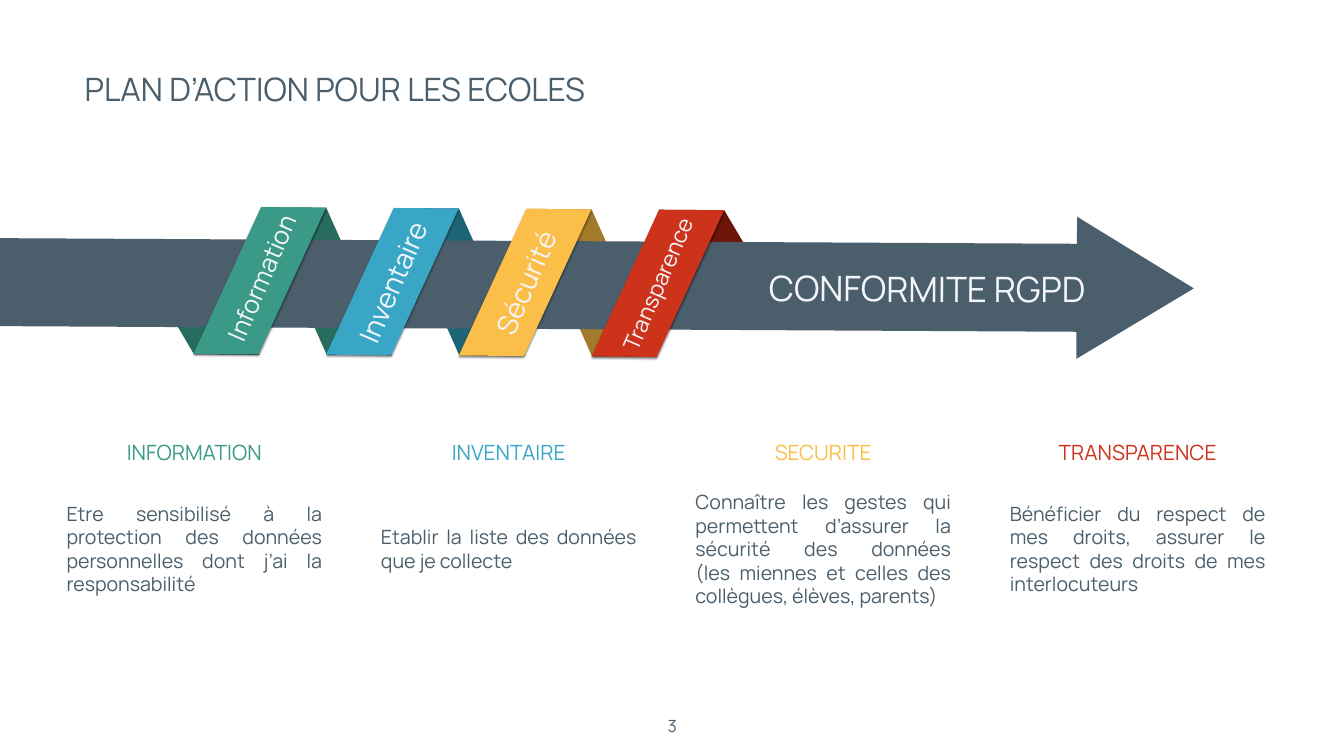
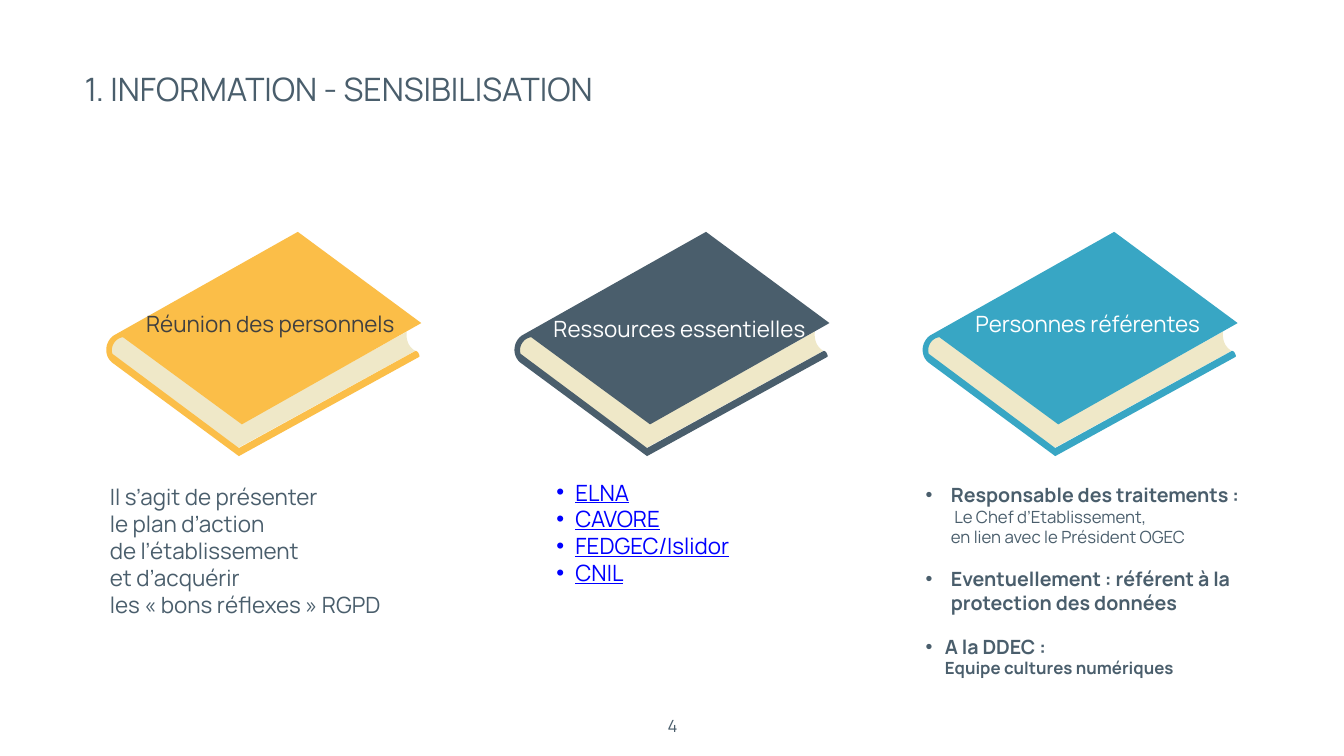
from lxml import etree
from pptx import Presentation
from pptx.dml.color import RGBColor
from pptx.enum.shapes import MSO_SHAPE
from pptx.enum.text import MSO_ANCHOR, PP_ALIGN
from pptx.oxml.ns import qn
from pptx.util import Pt

PX = 9144
FONT = "Manrope"
TOP, MIDDLE = MSO_ANCHOR.TOP, MSO_ANCHOR.MIDDLE
LEFT, CENTER, JUSTIFY = PP_ALIGN.LEFT, PP_ALIGN.CENTER, PP_ALIGN.JUSTIFY
RIGHT_ARROW = MSO_SHAPE.RIGHT_ARROW

COLORS = {
    "slate": "4A5E6C", "green": "3A9A87", "blue": "38A6C4", "yellow": "FBBE48",
    "red": "CD321B", "light": "F3F5F9", "white": "FFFFFF", "charcoal": "404040",
    "link": "0000FF", "paper": "EFE8C8", "green edge": "256C5F",
    "green fold": "276C5F", "blue fold": "1E6477", "yellow fold": "A17A2C",
    "red fold": "6D1509",
}

TITLE_BOX = (162, 131, 2497, 89)
NUMBER_BOX = (1319, 1415, 29, 52)

PLAN_TITLE = "PLAN D’ACTION POUR LES ECOLES"
PLAN_GOAL = "CONFORMITE RGPD"
STEPS = [
    ("Information", 36, (358, 509, 320, 83), "green", "INFORMATION",
     "Etre sensibilisé à la protection des données personnelles dont j’ai la responsabilité"),
    ("Inventaire", 40, (640, 517, 277, 84), "blue", "INVENTAIRE",
     "Etablir la liste des données que je collecte"),
    ("Sécurité", 40, (904, 519, 277, 84), "yellow", "SECURITE",
     "Connaître les gestes qui permettent d’assurer la sécurité des données\n"
     "(les miennes et celles des collègues, élèves, parents)"),
    ("Transparence", 32, (1147, 521, 315, 84), "red", "TRANSPARENCE",
     "Bénéficier du respect de mes droits, assurer le respect des droits de mes interlocuteurs"),
]
TILT = 0.3
RIBBON_TURN = 293.3
RIBBON_STEP, RIBBON_DROP = 263.3, 1.7
COLUMN_LEFT, COLUMN_STEP, COLUMN_WIDTH = 126, 624, 519
RIBBON = [(0, 0), (129, 1), (263, -290), (134, -291)]
LONG_FOLD = [(0, 0), (129, 1), (260, 294), (130, 293)]
SHORT_FOLD = [(0, 0), (129, 1), (260, 222), (130, 221)]
FOLDS = [
    ("green edge", SHORT_FOLD, 482), ("green fold", LONG_FOLD, 411),
    ("blue fold", LONG_FOLD, 411), ("yellow fold", LONG_FOLD, 411),
    ("red fold", SHORT_FOLD, 411),
]

BOOK_STEP = 810
BOOK_PAGES = [
    (807, 658), (806, 666, 807, 675, 811, 683), (814, 688, 818, 693, 824, 696),
    (470, 890), (212, 697), (237, 663), (480, 840),
]
BOOK_COVER = [
    (836, 641), (480, 842), (244, 669), (237, 670, 230, 674, 226, 681),
    (222, 687, 221, 695, 223, 702), (474, 889), (825, 696),
    (828, 697, 830, 699, 831, 702), (832, 704, 833, 706, 832, 708), (474, 905),
    (222, 719), (214, 712, 210, 702, 211, 691), (212, 681, 217, 672, 225, 666),
    (591, 460),
]

BOLD_LINE = {"size": Pt(28), "bold": True}
PLAIN_LINE = {"size": Pt(24), "bold": False}
SMALL_BOLD = {"size": Pt(24), "bold": True}
LINK = {"size": Pt(32), "underline": True}
BODY = {"size": Pt(32)}

BOOKS_TITLE = "1. INFORMATION - SENSIBILISATION"
BOOKS = [
    {"cover": "yellow", "label": "Réunion des personnels", "ink": "charcoal",
     "label box": (275, 610, 523, 65), "text box": (212, 952, 612, 280),
     "text color": "slate", "indents": [0], "gap": 0,
     "paras": [[("Il s’agit de présenter\nle plan d’action\nde l’établissement\n"
                 "et d’acquérir\nles « bons réflexes » RGPD", BODY)]]},
    {"cover": "slate", "label": "Ressources essentielles", "ink": "white",
     "label box": (1087, 620, 523, 65), "text box": (1098, 943, 521, 227),
     "text color": "link", "indents": [38] * 4, "gap": 0,
     "paras": [[(name, LINK)] for name in ("ELNA", "CAVORE", "FEDGEC/Islidor", "CNIL")]},
    {"cover": "blue", "label": "Personnes référentes", "ink": "white",
     "label box": (1925, 610, 467, 65), "text box": (1831, 951, 737, 402),
     "text color": "slate", "indents": [50, 50, 38], "gap": 29,
     "paras": [
         [("Responsable des traitements :\n", BOLD_LINE),
          (" Le Chef d’Etablissement,\nen lien avec le Président OGEC", PLAIN_LINE)],
         [("Eventuellement : référent à la protection des données", BOLD_LINE)],
         [("A la DDEC :\n", BOLD_LINE), ("Equipe cultures numériques", SMALL_BOLD)]]},
]


def color(name):
    return RGBColor.from_string(COLORS[name])


def emu(lengths):
    return [round(length * PX) for length in lengths]


def paint(shape, name):
    shape.shadow.inherit = False
    shape.fill.solid()
    shape.fill.fore_color.rgb = color(name)
    shape.line.fill.background()


def add_bullet(para, indent):
    props = para._p.get_or_add_pPr()
    props.set("marL", str(indent * PX))
    props.set("indent", str(-indent * PX))
    etree.SubElement(props, qn("a:buFont")).set("typeface", "Arial")
    etree.SubElement(props, qn("a:buChar")).set("char", "•")


def add_spans(para, spans, ink):
    for text, format_values in spans:
        for index, line in enumerate(text.split("\n")):
            if index:
                para.add_line_break()
            if line:
                span = para.add_run()
                span.text = line
                span.font.name = FONT
                span.font.color.rgb = color(ink)
                for key, value in format_values.items():
                    setattr(span.font, key, value)


def write(page, box, paras, ink, align=CENTER, anchor=MIDDLE, wrap=True,
          turn=0, indents=(0,), gap=0):
    shape = page.shapes.add_textbox(*emu(box))
    shape.rotation = turn
    frame = shape.text_frame
    frame.word_wrap = wrap
    frame.vertical_anchor = anchor
    for side in ("left", "top", "right", "bottom"):
        setattr(frame, f"margin_{side}", 6 * PX)
    for index, (spans, indent) in enumerate(zip(paras, indents)):
        para = frame.add_paragraph() if index else frame.paragraphs[0]
        para.alignment = align
        if gap and index < len(paras) - 1:
            para.space_after = Pt(gap)
        if indent:
            add_bullet(para, indent)
        add_spans(para, spans, ink)


def write_line(page, box, text, size, ink, **layout):
    write(page, box, [[(text, {"size": Pt(size)})]], ink, **layout)


def draw_outline(page, points, fill, left=0, top=0):
    places = [emu((x + left, y + top)) for x, y in points]
    builder = page.shapes.build_freeform(*places[0], scale=1.0)
    builder.add_line_segments(places[1:], close=True)
    shape = builder.convert_to_shape()
    paint(shape, fill)
    return shape


def add_soft_shadow(shape):
    effects = shape._element.spPr.find(qn("a:effectLst"))
    shadow = etree.SubElement(effects, qn("a:outerShdw"), blurRad=str(Pt(3)),
                              dist=str(Pt(2)), dir="5400000", rotWithShape="0")
    tint = etree.SubElement(shadow, qn("a:srgbClr"), val="000000")
    etree.SubElement(tint, qn("a:alpha"), val="50000")


def trace(segments, steps=6):
    points = []
    for segment in segments:
        if len(segment) == 2:
            points.append(segment)
            continue
        corners = [points[-1], segment[:2], segment[2:4], segment[4:]]
        for step in range(1, steps + 1):
            t = step / steps
            weights = ((1 - t) ** 3, 3 * t * (1 - t) ** 2, 3 * t * t * (1 - t), t ** 3)
            points.append(tuple(sum(w * corner[axis] for w, corner in zip(weights, corners))
                                for axis in (0, 1)))
    return points


def add_page(deck, title, number):
    page = deck.slides.add_slide(deck.slide_layouts[6])
    write_line(page, NUMBER_BOX, str(number), 24, "slate", anchor=TOP, wrap=False)
    write_line(page, TITLE_BOX, title, 46, "slate", align=LEFT)
    return page


def build_plan(deck):
    page = add_page(deck, PLAN_TITLE, 3)
    for index, (fill, outline, top) in enumerate(FOLDS):
        drop = RIBBON_DROP * (index - 1) if index else 0
        draw_outline(page, outline, fill, 255 + RIBBON_STEP * index, top + drop)
    arrow = page.shapes.add_shape(RIGHT_ARROW, *emu((-9, 425, 2378, 282)))
    arrow.rotation = TILT
    arrow.adjustments[0], arrow.adjustments[1] = 0.619, 0.824
    paint(arrow, "slate")
    for index, (name, size, box, tint, heading, detail) in enumerate(STEPS):
        ribbon = draw_outline(page, RIBBON, tint, 384 + RIBBON_STEP * index,
                              702 + RIBBON_DROP * index)
        add_soft_shadow(ribbon)
        write_line(page, box, name, size, "light", turn=RIBBON_TURN)
        left = COLUMN_LEFT + COLUMN_STEP * index
        write_line(page, (left, 861, COLUMN_WIDTH, 74), heading, 30, tint)
        write_line(page, (left, 949, COLUMN_WIDTH, 280), detail, 28, "slate", align=JUSTIFY)
    write_line(page, (1435, 528, 810, 88), PLAN_GOAL, 50, "light", turn=TILT)


def build_books(deck):
    page = add_page(deck, BOOKS_TITLE, 4)
    for index, book in enumerate(BOOKS):
        left = BOOK_STEP * index
        draw_outline(page, trace(BOOK_PAGES), "paper", left)
        draw_outline(page, trace(BOOK_COVER), book["cover"], left)
        write_line(page, book["label box"], book["label"], 32, book["ink"], wrap=False)
        write(page, book["text box"], book["paras"], book["text color"], align=LEFT,
              indents=book["indents"], gap=book["gap"])


def main():
    deck = Presentation()
    deck.slide_width, deck.slide_height = emu((2667, 1500))
    build_plan(deck)
    build_books(deck)
    deck.save("out.pptx")


if __name__ == "__main__":
    main()
